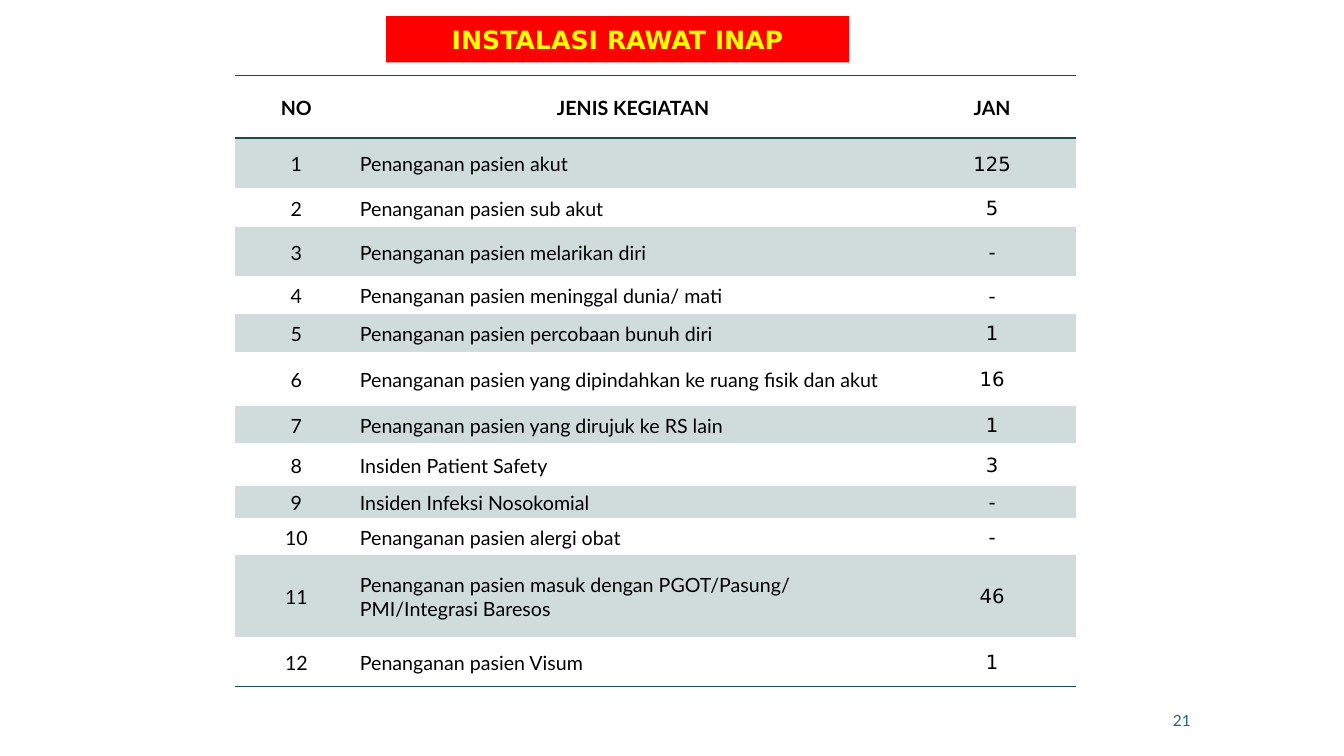
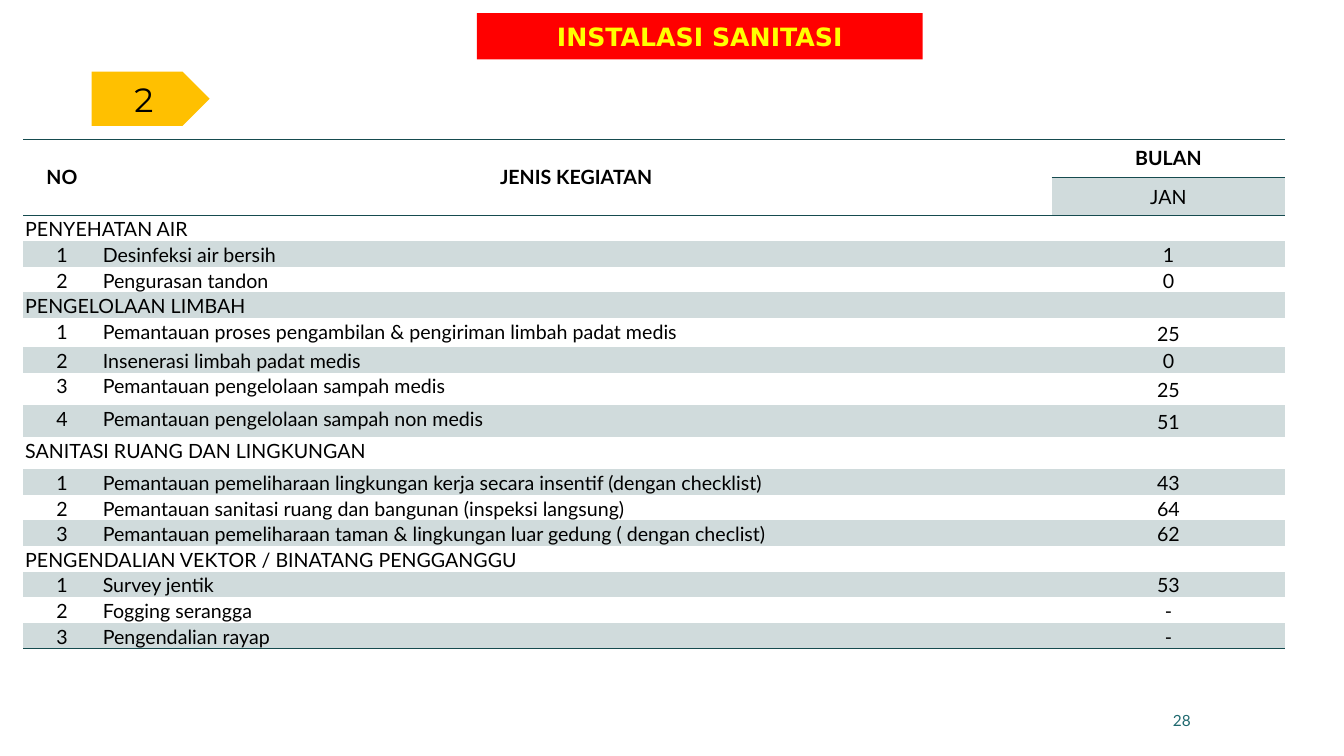
from lxml.etree import SubElement
from pptx import Presentation
from pptx.dml.color import RGBColor
from pptx.enum.shapes import MSO_SHAPE
from pptx.enum.text import MSO_ANCHOR, MSO_AUTO_SIZE, PP_ALIGN
from pptx.oxml import parse_xml
from pptx.oxml.ns import nsdecls, qn
from pptx.util import Inches, Pt

# Shared look
COLORS = {
    "banner": "FF0000",
    "banner_text": "FFFF00",
    "marker": "FFC000",
    "text": "000000",
    "number": "1F696F",
    "rule": "164B4F",
    "band": "D0DBDC",
}
BODY_FONT = "Lato"
DISPLAY_FONT = "DejaVu Sans"
MARKER_FONT = "Montserrat"
TABLE_SIZE = 14
NO_STYLE = "{2D5ABB26-0587-4C30-8999-92F81FD0307C}"
CELL_MARGINS = (0.02, 0.02, 0.02, 0)
HEADER_MARGINS = (0.2, 0.07, 0.2, 0.07)

# Inpatient activities: name, January value, row height
INPATIENT_ROWS = [
    ("Penanganan pasien akut", "125", 0.5),
    ("Penanganan pasien sub akut", "5", 0.38),
    ("Penanganan pasien melarikan diri", "-", 0.49),
    ("Penanganan pasien meninggal dunia/ mati", "-", 0.38),
    ("Penanganan pasien percobaan bunuh diri", "1", 0.37),
    ("Penanganan pasien yang dipindahkan ke ruang fisik dan akut", "16", 0.54),
    ("Penanganan pasien yang dirujuk ke RS lain", "1", 0.37),
    ("Insiden Patient Safety", "3", 0.42),
    ("Insiden Infeksi Nosokomial", "-", 0.32),
    ("Penanganan pasien alergi obat", "-", 0.37),
    ("Penanganan pasien masuk dengan PGOT/Pasung/\nPMI/Integrasi Baresos", "46", 0.81),
    ("Penanganan pasien Visum", "1", 0.49),
]

# Sanitation activities by section: heading, heading height, rows
SANITATION_SECTIONS = [
    ("PENYEHATAN AIR", 0.25, [
        ("Desinfeksi air bersih", "1", 0.25),
        ("Pengurasan tandon", "0", 0.25),
    ]),
    ("PENGELOLAAN LIMBAH", 0.25, [
        ("Pemantauan proses pengambilan & pengiriman limbah padat medis", "25", 0.29),
        ("Insenerasi limbah padat medis", "0", 0.25),
        ("Pemantauan pengelolaan sampah medis", "25", 0.32),
        ("Pemantauan pengelolaan sampah non medis", "51", 0.32),
    ]),
    ("SANITASI RUANG DAN LINGKUNGAN", 0.32, [
        ("Pemantauan pemeliharaan lingkungan kerja secara insentif (dengan checklist)", "43", 0.25),
        ("Pemantauan sanitasi ruang dan bangunan (inspeksi langsung)", "64", 0.25),
        ("Pemantauan pemeliharaan taman & lingkungan luar gedung ( dengan checlist)", "62", 0.25),
    ]),
    ("PENGENDALIAN VEKTOR / BINATANG PENGGANGGU", 0.25, [
        ("Survey jentik", "53", 0.25),
        ("Fogging serangga", "-", 0.25),
        ("Pengendalian rayap", "-", 0.25),
    ]),
]


def color(name):
    return RGBColor.from_string(COLORS[name])


def write_text(frame, text, size, font=BODY_FONT, ink="text", bold=False,
               align=PP_ALIGN.CENTER):
    paragraph = frame.paragraphs[0]
    paragraph.alignment = align
    for index, line in enumerate(text.split("\n")):
        if index:
            paragraph.add_line_break()
        run = paragraph.add_run()
        run.text = line
        run.font.size = Pt(size)
        run.font.name = font
        run.font.bold = bold
        run.font.color.rgb = color(ink)


def paint(shape, fill):
    shape.fill.solid()
    shape.fill.fore_color.rgb = color(fill)
    shape.line.fill.background()


def add_slide(presentation, title, left, top, width, number):
    """Slide with a rounded title banner and a page number."""
    slide = presentation.slides.add_slide(presentation.slide_layouts[5])
    banner = slide.shapes.title
    banner.left, banner.top = Inches(left), Inches(top)
    banner.width, banner.height = Inches(width), Inches(0.46)
    banner._element.spPr.find(qn("a:xfrm")).addnext(parse_xml(
        f'<a:prstGeom {nsdecls("a")} prst="roundRect"><a:avLst/></a:prstGeom>'))
    paint(banner, "banner")
    banner.text_frame.auto_size = MSO_AUTO_SIZE.NONE
    banner.text_frame.vertical_anchor = MSO_ANCHOR.MIDDLE
    write_text(banner.text_frame, title, 18, DISPLAY_FONT, "banner_text", True)

    box = slide.shapes.add_textbox(Inches(8.8), Inches(6.95), Inches(3.11), Inches(0.4))
    box.text_frame.word_wrap = True
    box.text_frame.vertical_anchor = MSO_ANCHOR.MIDDLE
    write_text(box.text_frame, number, 11, ink="number", align=PP_ALIGN.RIGHT)
    return slide


def add_marker(slide, text):
    marker = slide.shapes.add_shape(
        MSO_SHAPE.PENTAGON, Inches(0.91), Inches(0.71), Inches(1.17), Inches(0.54))
    marker.shadow.inherit = False
    paint(marker, "marker")
    marker.text_frame.vertical_anchor = MSO_ANCHOR.MIDDLE
    write_text(marker.text_frame, text, 24, MARKER_FONT)


def add_table(slide, left, top, widths, heights):
    """Plain table whose cells start empty, without fill, at the table's text size."""
    table = slide.shapes.add_table(
        len(heights), len(widths), Inches(left), Inches(top),
        Inches(sum(widths)), Inches(sum(heights))).table
    table.first_row = table.horz_banding = False
    table._tbl.tblPr.find(qn("a:tableStyleId")).text = NO_STYLE
    for column, width in zip(table.columns, widths):
        column.width = Inches(width)
    for row, height in zip(table.rows, heights):
        row.height = Inches(height)
    for cell in table.iter_cells():
        set_margins(cell, CELL_MARGINS)
        cell.fill.background()
        paragraph = cell.text_frame.paragraphs[0]._p
        SubElement(paragraph, qn("a:endParaRPr"), sz=str(TABLE_SIZE * 100))
    return table


def set_margins(cell, margins):
    (cell.margin_left, cell.margin_top,
     cell.margin_right, cell.margin_bottom) = map(Inches, margins)


def fill_cell(cell, text, anchor=MSO_ANCHOR.MIDDLE, **style):
    cell.vertical_anchor = anchor
    write_text(cell.text_frame, text, TABLE_SIZE, **style)


def band_row(table, row, first_column=0):
    for column in range(first_column, len(table.columns)):
        cell = table.cell(row, column)
        cell.fill.solid()
        cell.fill.fore_color.rgb = color("band")


def rule_row(table, row, sides):
    """Thin lines on a row; sides holds T, B or both."""
    for cell in table.rows[row].cells:
        properties = cell._tc.get_or_add_tcPr()
        for position, side in enumerate(sides):
            properties.insert(position, parse_xml(
                f'<a:ln{side} {nsdecls("a")} w="12700"><a:solidFill>'
                f'<a:srgbClr val="{COLORS["rule"]}"/></a:solidFill></a:ln{side}>'))


def add_inpatient_table(slide):
    heights = [0.62] + [height for _, _, height in INPATIENT_ROWS]
    table = add_table(slide, 2.33, 0.75, (1.22, 5.46, 1.66), heights)
    for column, heading in enumerate(("NO", "JENIS KEGIATAN", "JAN")):
        fill_cell(table.cell(0, column), heading, bold=True)
    for row, (activity, value, _) in enumerate(INPATIENT_ROWS, 1):
        fill_cell(table.cell(row, 0), str(row))
        fill_cell(table.cell(row, 1), activity, align=PP_ALIGN.LEFT)
        fill_cell(table.cell(row, 2), value, font=DISPLAY_FONT)
        if row % 2:
            band_row(table, row)
    rule_row(table, 0, "TB")
    rule_row(table, len(INPATIENT_ROWS), "B")


def add_sanitation_table(slide):
    # Flatten sections into rows: number, text, value, height
    rows = []
    for heading, heading_height, activities in SANITATION_SECTIONS:
        rows.append((None, heading, None, heading_height))
        rows += [(str(number), *activity) for number, activity in enumerate(activities, 1)]
    heights = [0.38, 0.38] + [row[-1] for row in rows]
    table = add_table(slide, 0.23, 1.38, (0.77, 6.71, 2.72, 2.32), heights)

    # Two-row header
    table.cell(0, 0).merge(table.cell(1, 0))
    table.cell(0, 1).merge(table.cell(1, 2))
    for row, column, heading in ((0, 0, "NO"), (0, 1, "JENIS KEGIATAN"),
                                 (0, 3, "BULAN"), (1, 3, "JAN")):
        cell = table.cell(row, column)
        set_margins(cell, HEADER_MARGINS)
        fill_cell(cell, heading, bold=row == 0)
    band_row(table, 1, first_column=3)

    # Section headings and activities
    for row, (number, text, value, _) in enumerate(rows, 2):
        if number is None:
            table.cell(row, 0).merge(table.cell(row, 3))
            fill_cell(table.cell(row, 0), text, MSO_ANCHOR.TOP, align=PP_ALIGN.LEFT)
        else:
            table.cell(row, 1).merge(table.cell(row, 2))
            fill_cell(table.cell(row, 0), number, MSO_ANCHOR.TOP)
            fill_cell(table.cell(row, 1), text, MSO_ANCHOR.TOP, align=PP_ALIGN.LEFT)
            fill_cell(table.cell(row, 3), value)
        if row % 2:
            band_row(table, row)
    rule_row(table, 0, "TB")
    rule_row(table, 1, "B")
    rule_row(table, len(heights) - 1, "B")


def main():
    presentation = Presentation()
    presentation.slide_width, presentation.slide_height = Inches(13.33), Inches(7.5)

    inpatient = add_slide(presentation, "INSTALASI RAWAT INAP", 3.83, 0.16, 4.59, "21")
    add_inpatient_table(inpatient)

    sanitation = add_slide(presentation, "INSTALASI SANITASI", 4.73, 0.13, 4.42, "28")
    add_marker(sanitation, "2")
    add_sanitation_table(sanitation)

    presentation.save("out.pptx")


if __name__ == "__main__":
    main()
